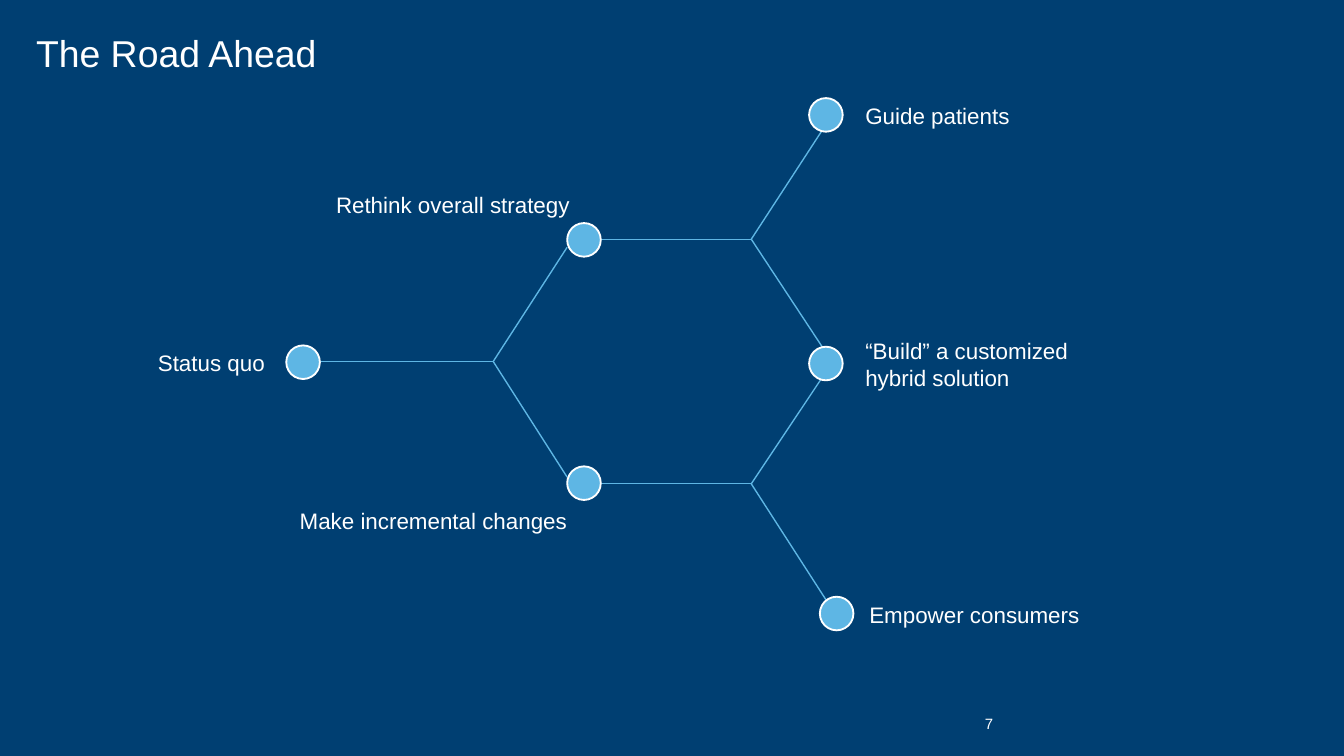
import pptx
import pptx.dml.color
import pptx.enum.shapes
import pptx.enum.text
import pptx.oxml.ns
import pptx.util
from lxml import etree

NAVY, SKY, WHITE = "003F72", "5EB6E4", "FFFFFF"
DOT = 0.25
LEFT = pptx.enum.text.PP_ALIGN.LEFT
RIGHT = pptx.enum.text.PP_ALIGN.RIGHT
TOP = pptx.enum.text.MSO_ANCHOR.TOP
MIDDLE = pptx.enum.text.MSO_ANCHOR.MIDDLE
BOTTOM = pptx.enum.text.MSO_ANCHOR.BOTTOM

DOTS = [(2.13, 2.57), (4.22, 1.66), (4.22, 3.47),
        (6.02, 0.73), (6.02, 2.58), (6.1, 4.44)]

HUBS = [
    ((3.67, 2.69), (2.38, 2.69), [(4.22, 1.84), (4.22, 3.55)]),
    ((5.59, 1.78), (4.47, 1.78), [(6.15, 0.92), (6.15, 2.63)]),
    ((5.59, 3.6), (4.47, 3.6), [(6.15, 2.76), (6.15, 4.47)]),
]

LABELS = [
    ("Status quo", 0, 2.48, 2.07, RIGHT),
    ("Rethink overall strategy", 2.27, 1.3, 2.07, RIGHT),
    ("Make incremental changes", 1.61, 3.65, 2.71, RIGHT),
    ("Guide patients", 6.34, 0.64, 2.07, LEFT),
    ("“Build” a customized\nhybrid solution", 6.34, 2.49, 2.84, LEFT),
    ("Empower consumers", 6.37, 4.35, 2.07, LEFT),
]


def inches(*values):
    """Convert numbers to lengths."""
    return [pptx.util.Inches(v) for v in values]


def set_fill(fill, color):
    """Make a fill solid in a hex colour."""
    fill.solid()
    fill.fore_color.rgb = pptx.dml.color.RGBColor.from_string(color)


def add_text(slide, text, box, size, align=LEFT, anchor=MIDDLE,
             inset=(0.1, 0.1), spacing=None):
    """Add a one-paragraph white text box."""
    tf = slide.shapes.add_textbox(*inches(*box)).text_frame
    tf.word_wrap = True
    tf.vertical_anchor = anchor
    tf.margin_left, tf.margin_top = inches(*inset)
    tf.margin_right, tf.margin_bottom = inches(*inset)
    p = tf.paragraphs[0]
    p.text = text.replace("\n", "\v")
    p.alignment = align
    p.line_spacing = spacing
    p.font.name = "Arial"
    p.font.size = pptx.util.Pt(size)
    set_fill(p.font.fill, WHITE)


def add_line(slide, start, end, width):
    """Add a thin straight line without a shadow."""
    line = slide.shapes.add_connector(
        pptx.enum.shapes.MSO_CONNECTOR.STRAIGHT, *inches(*start, *end))
    set_fill(line.line.fill, SKY)
    line.line.width = pptx.util.Pt(width)
    etree.SubElement(line._element.spPr, pptx.oxml.ns.qn("a:effectLst"))


def add_dot(slide, x, y):
    """Add a round node with a white outline."""
    sp = slide.shapes.add_shape(pptx.enum.shapes.MSO_SHAPE.OVAL,
                                *inches(x, y, DOT, DOT))
    sp.shadow.inherit = False
    set_fill(sp.fill, SKY)
    set_fill(sp.line.fill, WHITE)
    sp.line.width = pptx.util.Pt(1)


def main():
    """Build the slide and save it."""
    prs = pptx.Presentation()
    prs.slide_width, prs.slide_height = inches(10, 10 * 9 / 16)
    slide = prs.slides.add_slide(prs.slide_layouts[6])
    set_fill(slide.background.fill, NAVY)
    add_text(slide, "7", (7, 5.32, 0.39, 0.13), 8, RIGHT, BOTTOM, (0, 0))
    add_text(slide, "The Road Ahead", (0.17, 0.21, 9.2, 0.43), 20,
             anchor=TOP, inset=(0.1, 0.05), spacing=0.9)
    for hub, stem, branches in HUBS:
        add_line(slide, stem, hub, 0.5)
        for branch in branches:
            add_line(slide, hub, branch, 0.75)
    for x, y in DOTS:
        add_dot(slide, x, y)
    for text, x, y, w, align in LABELS:
        add_text(slide, text, (x, y, w, 0.44), 12, align)
    prs.save("out.pptx")


if __name__ == "__main__":
    main()
